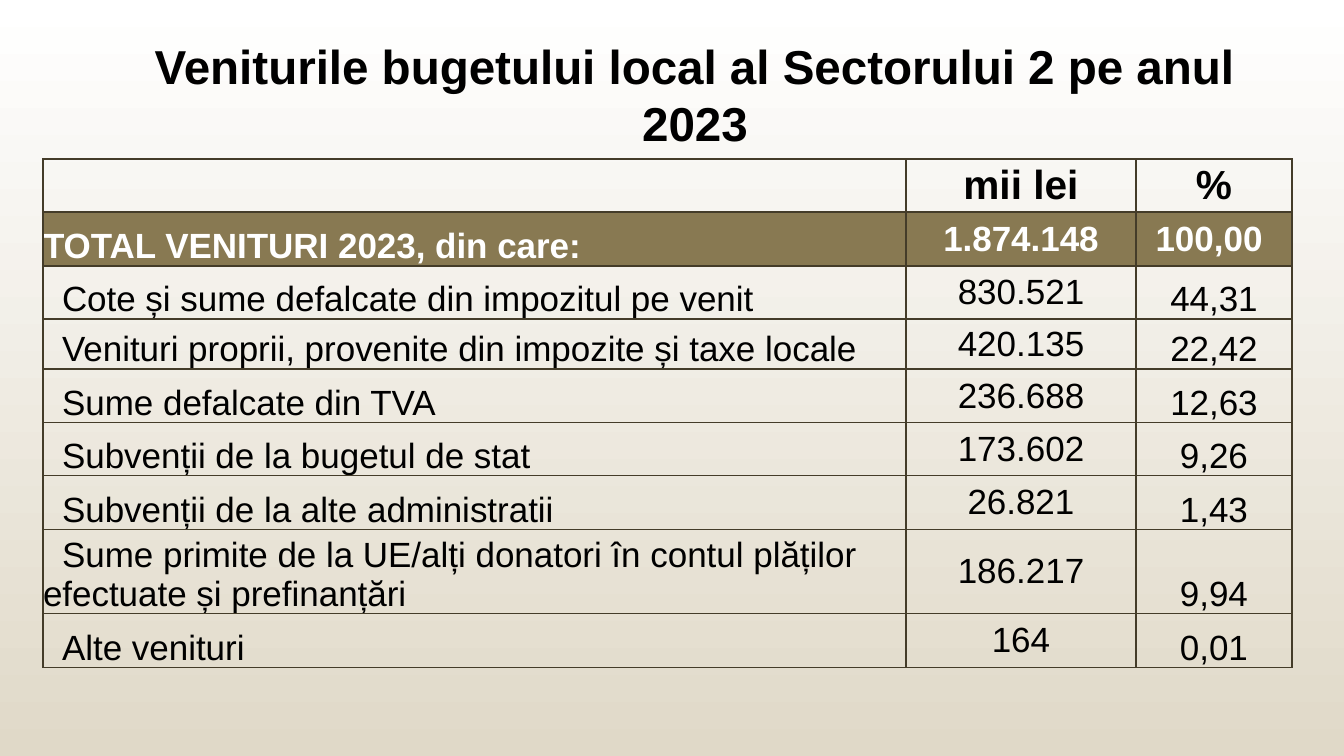
from pptx import Presentation
from pptx.dml.color import RGBColor
from pptx.enum.text import MSO_ANCHOR, PP_ALIGN
from pptx.oxml import parse_xml
from pptx.oxml.ns import nsdecls
from pptx.util import Pt

EMU_PER_PX = 12192000 / 1344
COLORS = {
    "text": "000000",
    "total_text": "FFFFFF",
    "total_fill": "887952",
    "border": "443C29",
    "top": "FFFFFF",
    "bottom": "E0D9C8",
}
COLUMN_WIDTHS = [863, 230, 156]
ROW_HEIGHTS = [53, 54, 53, 50, 54, 53, 54, 84, 54]
REVENUES = [
    ("", "mii lei", "%"),
    ("TOTAL VENITURI 2023, din care:", "1.874.148", "100,00"),
    ("Cote și sume defalcate din impozitul pe venit", "830.521", "44,31"),
    ("Venituri proprii, provenite din impozite și taxe locale", "420.135", "22,42"),
    ("Sume defalcate din TVA", "236.688", "12,63"),
    ("Subvenții de la bugetul de stat", "173.602", "9,26"),
    ("Subvenții de la alte administratii", "26.821", "1,43"),
    ("Sume primite de la UE/alți donatori în contul plăților efectuate și prefinanțări",
     "186.217", "9,94"),
    ("Alte venituri", "164", "0,01"),
]
HEADER_ROW, TOTAL_ROW = 0, 1
LABEL, AMOUNT, SHARE = range(3)


def px(length):
    return round(length * EMU_PER_PX)


def rgb(name):
    return RGBColor.from_string(COLORS[name])


class RevenueSlide:
    font = "Arial"

    def __init__(self, deck):
        self.page = deck.slides.add_slide(deck.slide_layouts[6])

    def background(self):
        fill = self.page.background.fill
        fill.gradient()
        fill.gradient_angle = 270
        for stop, position, name in zip(fill.gradient_stops, (0, 1), ("top", "bottom")):
            stop.position = position
            stop.color.rgb = rgb(name)

    def add_run(self, para, text, size, color="text", bold=False):
        span = para.add_run()
        span.text = text
        span.font.name = self.font
        span.font.size = Pt(size)
        span.font.bold = bold
        span.font.color.rgb = rgb(color)

    def title(self, text, left, top, width, height):
        box = self.page.shapes.add_textbox(px(left), px(top), px(width), px(height))
        frame = box.text_frame
        frame.word_wrap = True
        frame.vertical_anchor = MSO_ANCHOR.TOP
        para = frame.paragraphs[0]
        para.alignment = PP_ALIGN.CENTER
        para.line_spacing = Pt(40.7)
        self.add_run(para, text, 34, bold=True)

    def table(self, left, top):
        table = self.page.shapes.add_table(
            len(REVENUES), len(COLUMN_WIDTHS), px(left), px(top),
            px(sum(COLUMN_WIDTHS)), px(sum(ROW_HEIGHTS))).table
        table.first_row = False
        table.horz_banding = False
        for column, width in zip(table.columns, COLUMN_WIDTHS):
            column.width = px(width)
        for row, height in zip(table.rows, ROW_HEIGHTS):
            row.height = px(height)
        for row_number, values in enumerate(REVENUES):
            for column_number, text in enumerate(values):
                self.cell(table.cell(row_number, column_number),
                          text, row_number, column_number)

    def cell(self, cell, text, row, column):
        cell.margin_left = cell.margin_right = cell.margin_top = cell.margin_bottom = 0
        detail = row > TOTAL_ROW
        low = (column == LABEL and row != HEADER_ROW) or (column == SHARE and detail)
        cell.vertical_anchor = MSO_ANCHOR.BOTTOM if low else MSO_ANCHOR.MIDDLE
        if row == TOTAL_ROW and column == SHARE:
            cell.margin_right = px(10)
        para = cell.text_frame.paragraphs[0]
        para.alignment = PP_ALIGN.LEFT if column == LABEL else PP_ALIGN.CENTER
        if column == LABEL and detail:
            para_properties = para._p.get_or_add_pPr()
            para_properties.set("marL", "0")
            para_properties.set("indent", str(px(19)))
        if text:
            self.add_run(para, text, 29 if row == HEADER_ROW else 25,
                         "total_text" if row == TOTAL_ROW else "text", not detail)
        self.borders(cell)
        if row == TOTAL_ROW:
            cell.fill.solid()
            cell.fill.fore_color.rgb = rgb("total_fill")
        else:
            cell.fill.background()

    def borders(self, cell):
        properties = cell._tc.get_or_add_tcPr()
        for side in ("lnL", "lnR", "lnT", "lnB"):
            properties.append(parse_xml(
                f'<a:{side} {nsdecls("a")} w="{Pt(1)}"><a:solidFill>'
                f'<a:srgbClr val="{COLORS["border"]}"/></a:solidFill></a:{side}>'))


def main():
    deck = Presentation()
    deck.slide_width, deck.slide_height = px(1344), px(756)
    slide = RevenueSlide(deck)
    slide.background()
    slide.title("Veniturile bugetului local al Sectorului 2 pe anul 2023",
                133, 32, 1124, 109)
    slide.table(43, 159)
    deck.save("out.pptx")


if __name__ == "__main__":
    main()
